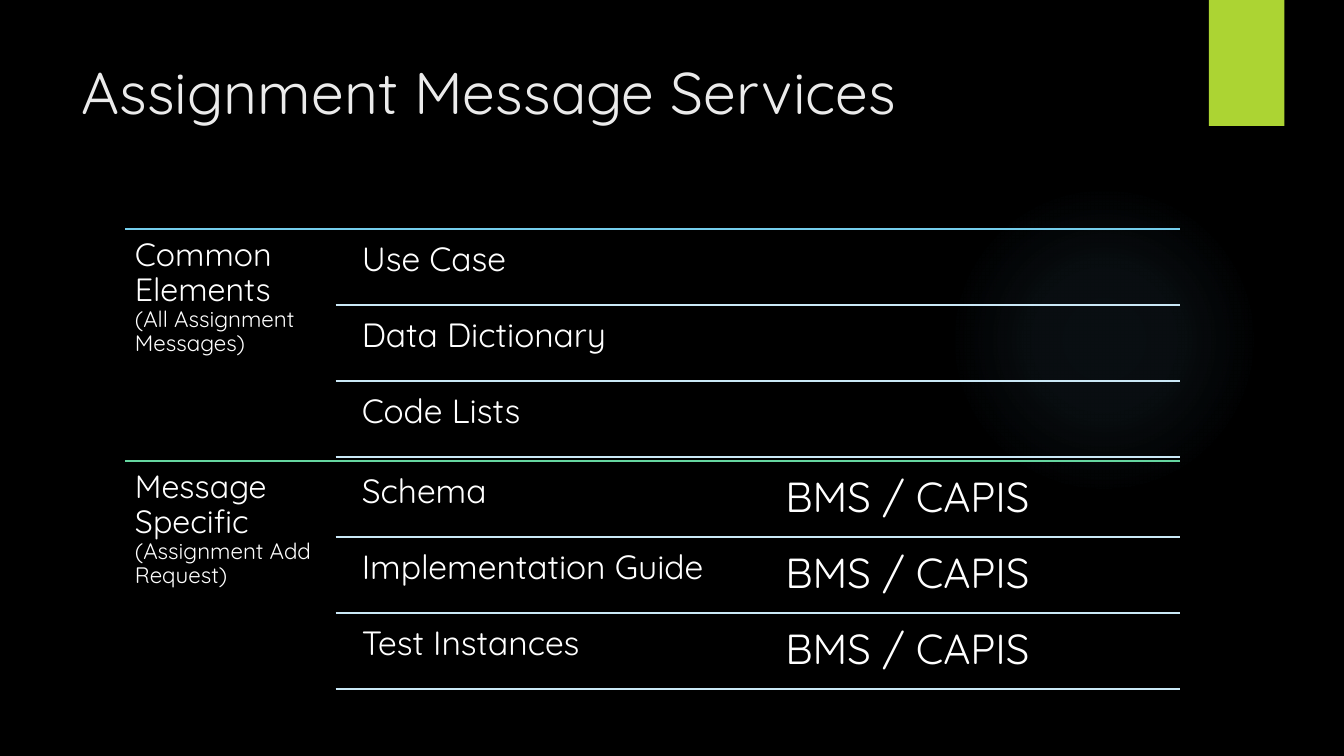
from lxml import etree
from pptx import Presentation
from pptx.dml.color import RGBColor
from pptx.enum.shapes import MSO_CONNECTOR, MSO_SHAPE
from pptx.enum.text import MSO_ANCHOR, MSO_AUTO_SIZE, PP_ALIGN
from pptx.oxml import parse_xml
from pptx.oxml.ns import nsdecls, qn
from pptx.util import Inches, Pt

LINE = MSO_CONNECTOR.STRAIGHT
RECT, OVAL = MSO_SHAPE.RECTANGLE, MSO_SHAPE.OVAL
TOP, LEFT, FIXED = MSO_ANCHOR.TOP, PP_ALIGN.LEFT, MSO_AUTO_SIZE.NONE

BLACK = RGBColor(0x00, 0x00, 0x00)
WHITE = RGBColor(0xFF, 0xFF, 0xFF)
PALE = RGBColor(0xEB, 0xEB, 0xEB)
LIME = RGBColor(0xAC, 0xD4, 0x33)
BLUE = RGBColor(0x75, 0xCE, 0xEC)
GREEN = RGBColor(0x65, 0xD6, 0xA0)
ICE = RGBColor(0xCA, 0xE8, 0xF6)
FONT = "Quicksand"

# Grid in inches: group heading, item and system columns
HEAD, RULE, ITEM, SYSTEM, END = 1.24, 3.33, 3.49, 7.67, 11.7
START, GROUP, ROW, GAP = 2.27, 2.3, 0.755, 0.035

GROUPS = [
    (BLUE, "Common Elements \v", "(All Assignment Messages)",
     [("Use Case", ""), ("Data Dictionary", ""), ("Code Lists", "")]),
    (GREEN, "Message Specific ", "(Assignment Add Request)",
     [("Schema", "BMS / CAPIS"), ("Implementation Guide", "BMS / CAPIS"),
      ("Test Instances", "BMS / CAPIS")]),
]

deck = Presentation()
deck.slide_width, deck.slide_height = Inches(13.33), Inches(7.5)
slide = deck.slides.add_slide(deck.slide_layouts[5])
slide.background.fill.solid()
slide.background.fill.fore_color.rgb = BLACK
shapes = slide.shapes


def add_text(x, y, wide, high, text, size, inset=0.1):
    """Add a white text box and return its paragraph."""
    frame = shapes.add_textbox(
        Inches(x), Inches(y), Inches(wide), Inches(high)).text_frame
    frame.word_wrap = True
    frame.margin_left = frame.margin_right = Inches(inset)
    frame.margin_top = frame.margin_bottom = Inches(inset)
    para = frame.paragraphs[0]
    para.text = text
    para.line_spacing = 0.9
    para.font.name, para.font.size = FONT, Pt(size)
    para.font.color.rgb = WHITE
    return para


def add_rule(x, y, color):
    """Draw a flat line from x to the right edge of the grid."""
    rule = shapes.add_connector(
        LINE, Inches(x), Inches(y), Inches(END), Inches(y))
    rule.line.color.rgb = color
    rule.line.width = Pt(1.5)
    etree.SubElement(rule._element.spPr, qn("a:effectLst"))


# Soft round glow
glow = shapes.add_shape(
    OVAL, Inches(9.41), Inches(1.83), Inches(3.08), Inches(3.08))
glow.shadow.inherit = False
glow.line.fill.background()
stops = "".join(
    f'<a:gs pos="{at}000"><a:srgbClr val="7AC4F0">'
    f'<a:alpha val="{alpha}000"/></a:srgbClr></a:gs>'
    for at, alpha in [(0, 7), (36, 6), (69, 0), (100, 0)])
glow._element.spPr.find(qn("a:prstGeom")).addnext(parse_xml(
    f'<a:gradFill {nsdecls("a")}><a:gsLst>{stops}</a:gsLst>'
    '<a:path path="circle"><a:fillToRect l="50000" t="50000" '
    'r="50000" b="50000"/></a:path></a:gradFill>'))

# Corner tab
tab = shapes.add_shape(RECT, Inches(11.99), 0, Inches(0.75), Inches(1.25))
tab.shadow.inherit = False
tab.fill.solid()
tab.fill.fore_color.rgb = LIME
tab.line.fill.background()

title = shapes.title
title.left, title.top = Inches(0.71), Inches(0.5)
title.width, title.height = Inches(10.99), Inches(1.53)
frame = title.text_frame
frame.text = "Assignment Message Services"
frame.vertical_anchor, frame.auto_size = TOP, FIXED
para = frame.paragraphs[0]
para.alignment = LEFT
para.font.name, para.font.size = FONT, Pt(42)
para.font.color.rgb = PALE

for g, (color, name, scope, items) in enumerate(GROUPS):
    top = START + g * GROUP
    add_rule(HEAD, top, color)
    para = add_text(HEAD, top, RULE - HEAD, GROUP, name, 23)
    note = para.add_run()
    note.text = scope
    note.font.size = Pt(16)
    for i, (item, system) in enumerate(items):
        y = top + i * ROW
        add_text(ITEM, y + GAP, 4.02, ROW - GAP, item, 24)
        if system:
            add_text(SYSTEM, y + GAP, 4.02, ROW - GAP, system, 30, 0.12)
        add_rule(RULE, y + ROW, ICE)

deck.save("out.pptx")
